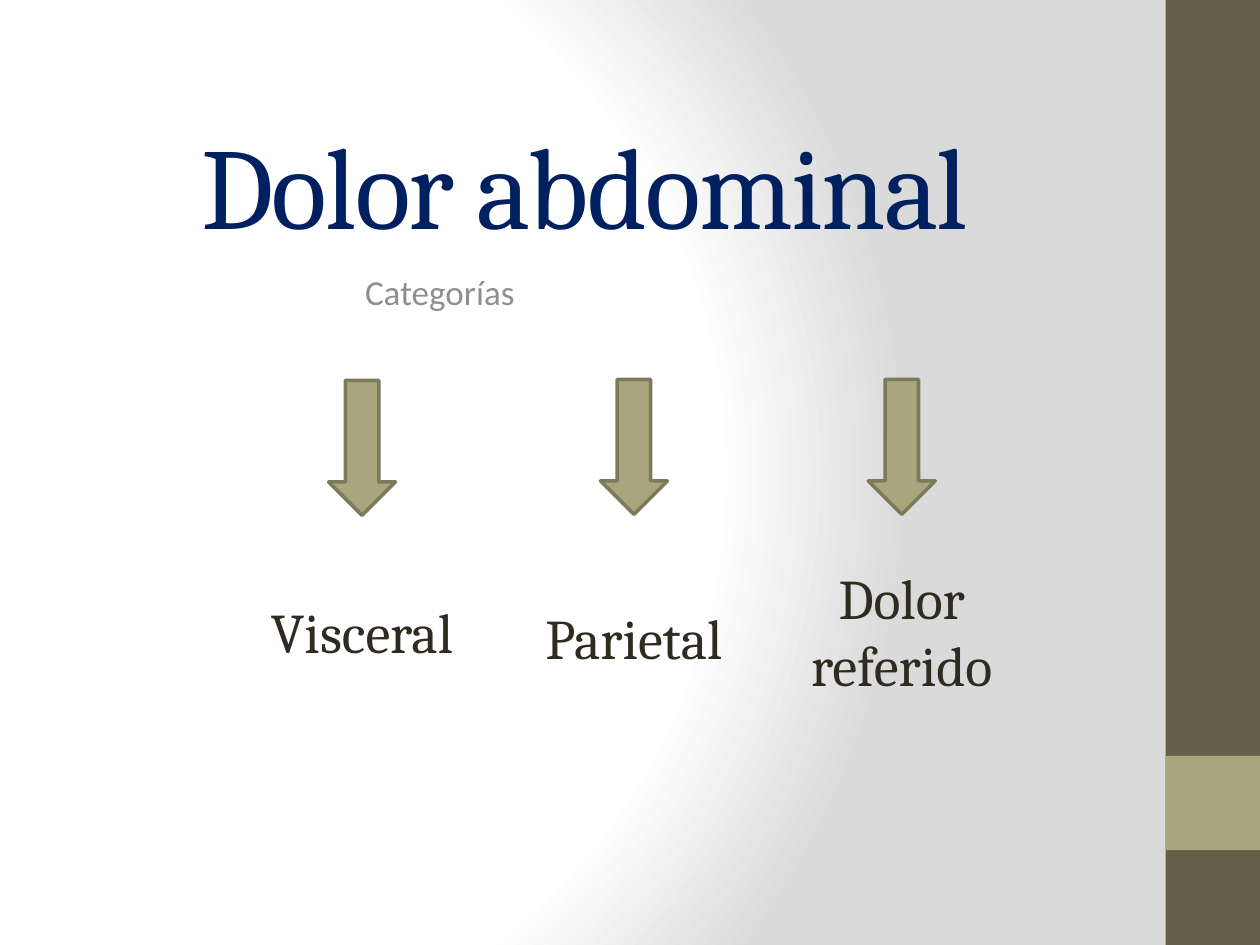
from dataclasses import dataclass

from lxml import etree
from pptx import Presentation
from pptx import util as u
from pptx.dml.color import RGBColor
from pptx.enum import shapes, text
from pptx.oxml import ns


@dataclass(frozen=True)
class Theme:
    heading_font: str = "Cambria"
    body_font: str = "Calibri"
    title_size: int = 66
    subtitle_size: int = 20
    label_size: int = 32
    navy: str = "002060"
    grey: str = "8F8F8D"
    ink: str = "2F2B20"
    brown: str = "675E47"
    olive: str = "A9A57C"
    outline: str = "7D7A5C"
    backdrop: tuple = ((0, "FFFFFF"), (75, "FFFFFF"), (100, "DADADA"))


class Painter:
    def __init__(self, theme, page):
        self.theme = theme
        self.page = page

    def background(self):
        fill = self.page.background.fill
        fill.gradient()
        gradient = self.page.element.find(".//" + ns.qn("a:gradFill"))
        for child in list(gradient):
            gradient.remove(child)
        stops = etree.SubElement(gradient, ns.qn("a:gsLst"))
        for position, color in self.theme.backdrop:
            stop = etree.SubElement(stops, ns.qn("a:gs"), pos=str(position * 1000))
            etree.SubElement(stop, ns.qn("a:srgbClr"), val=color)
        circle = etree.SubElement(gradient, ns.qn("a:path"), {"path": "circle"})
        etree.SubElement(circle, ns.qn("a:fillToRect"),
                         l="20000", t="50000", r="100000", b="50000")

    def shape(self, kind, left, top, width, height, color, outline=None):
        shape = self.page.shapes.add_shape(
            kind, u.Cm(left), u.Cm(top), u.Cm(width), u.Cm(height))
        shape.shadow.inherit = False
        shape.fill.solid()
        shape.fill.fore_color.rgb = RGBColor.from_string(color)
        if outline:
            shape.line.color.rgb = RGBColor.from_string(outline)
            shape.line.width = u.Pt(2)
        else:
            shape.line.fill.background()

    def band(self, top, height, color):
        self.shape(shapes.MSO_SHAPE.RECTANGLE, 23.5, top, 1.9, height, color)

    def arrow(self, center, top):
        width = 1.35
        self.shape(shapes.MSO_SHAPE.DOWN_ARROW, center - width / 2, top, width, 2.72,
                   self.theme.olive, self.theme.outline)

    def words(self, content, left, top, width, height, font, size, color,
              anchor=text.MSO_ANCHOR.TOP, align=text.PP_ALIGN.LEFT, tracking=0):
        box = self.page.shapes.add_textbox(
            u.Cm(left), u.Cm(top), u.Cm(width), u.Cm(height))
        frame = box.text_frame
        frame.word_wrap = True
        frame.vertical_anchor = anchor
        para = frame.paragraphs[0]
        para.alignment = align
        span = para.add_run()
        span.text = content
        span.font.name = font
        span.font.size = u.Pt(size)
        span.font.color.rgb = RGBColor.from_string(color)
        if tracking:
            span._r.get_or_add_rPr().set("spc", str(tracking * 100))

    def title(self, content):
        self.words(content, 3.81, 1.12, 21.59, 4.09, self.theme.heading_font,
                   self.theme.title_size, self.theme.navy,
                   anchor=text.MSO_ANCHOR.BOTTOM, tracking=-1)

    def subtitle(self, content):
        self.words(content, 7.11, 5.33, 11.81, 2.39, self.theme.body_font,
                   self.theme.subtitle_size, self.theme.grey)

    def label(self, content, center, top):
        width = 5.2
        self.words(content, center - width / 2, top, width, 2.77,
                   self.theme.heading_font, self.theme.label_size, self.theme.ink,
                   anchor=text.MSO_ANCHOR.MIDDLE, align=text.PP_ALIGN.CENTER)


def main():
    deck = Presentation()
    deck.slide_width, deck.slide_height = u.Cm(25.4), u.Cm(19.05)
    theme = Theme()
    painter = Painter(theme, deck.slides.add_slide(deck.slide_layouts[6]))
    painter.background()
    painter.band(0, 19.05, theme.brown)
    painter.band(15.24, 1.9, theme.olive)
    painter.title("Dolor abdominal")
    painter.subtitle("Categorías")
    categories = (
        ("Visceral", 7.3, 7.67, 11.33),
        ("Parietal", 12.78, 7.65, 11.46),
        ("Dolor referido", 18.18, 7.65, 11.33),
    )
    for category, center, arrow_top, label_top in categories:
        painter.arrow(center, arrow_top)
        painter.label(category, center, label_top)
    deck.save("out.pptx")


if __name__ == "__main__":
    main()
